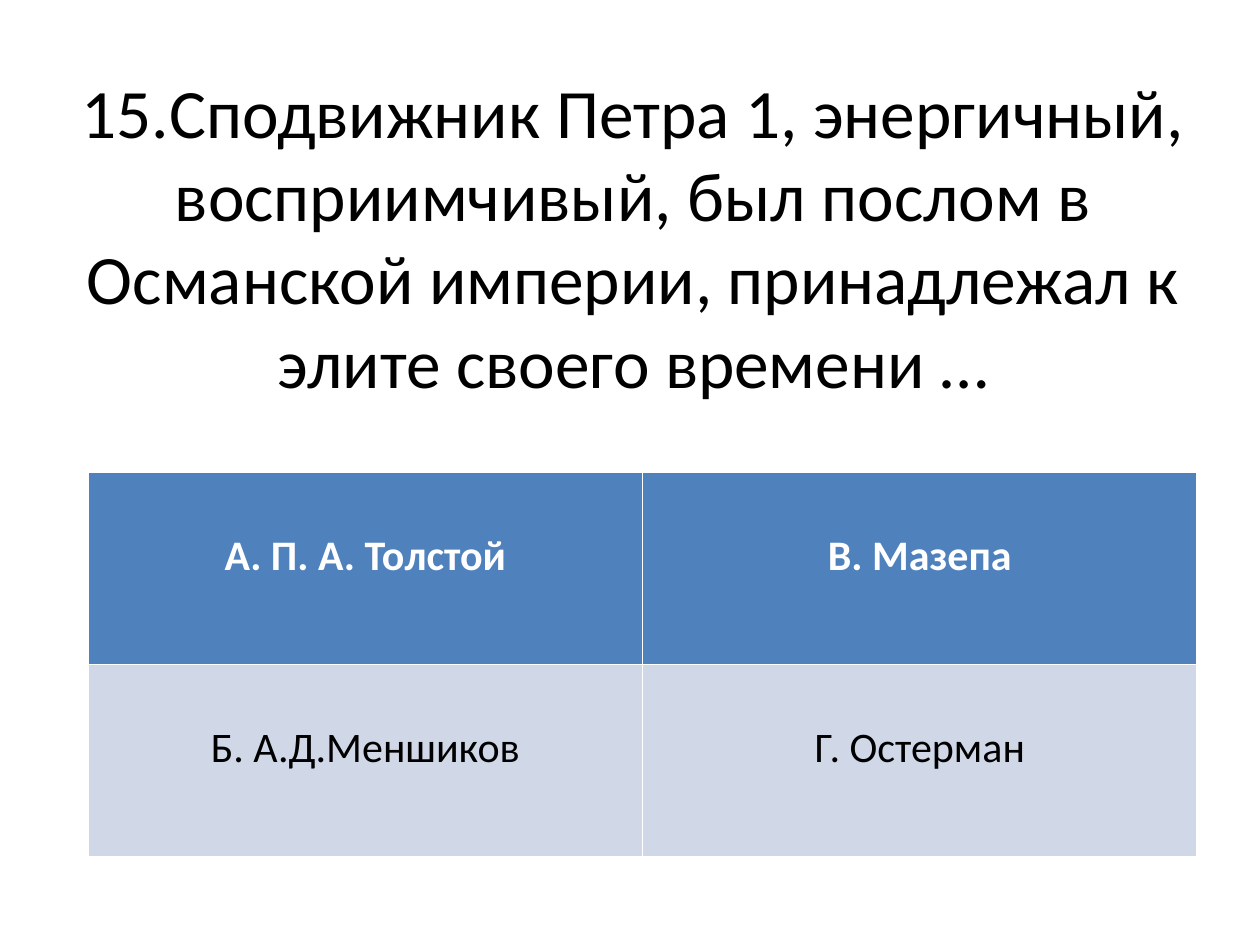
from pptx import Presentation
from pptx.dml.color import RGBColor
from pptx.enum.text import MSO_ANCHOR, PP_ALIGN
from pptx.util import Inches, Pt

QUESTION = ("15.Сподвижник Петра 1, энергичный, восприимчивый, был послом в "
            "Османской империи, принадлежал к элите своего времени …")
ANSWERS = [
    ["А. П. А. Толстой", "В. Мазепа"],
    ["Б. А.Д.Меншиков", "Г. Остерман"],
]
COLORS = {"header": "4F81BD", "body": "D0D8E8", "light": "FFFFFF", "dark": "000000"}
FONT = "Calibri"
TITLE_BOX = (0.55, 0.3, 8.95, 3.14)
TABLE_BOX = (0.7, 3.75, 8.8, 3.05)


def write(tf, text, size, color, bold=False):
    tf.text = text
    p = tf.paragraphs[0]
    p.alignment = PP_ALIGN.CENTER
    font = p.runs[0].font
    font.name, font.size, font.bold = FONT, Pt(size), bold
    font.color.rgb = RGBColor.from_string(COLORS[color])


def add_question(s):
    tf = s.shapes.add_textbox(*map(Inches, TITLE_BOX)).text_frame
    tf.word_wrap = True
    tf.vertical_anchor = MSO_ANCHOR.MIDDLE
    write(tf, QUESTION, 39.6, "dark")


def add_answers(s):
    rows, cols = len(ANSWERS), len(ANSWERS[0])
    table = s.shapes.add_table(rows, cols, *map(Inches, TABLE_BOX)).table
    for i, row in enumerate(ANSWERS):
        header = i == 0
        for j, answer in enumerate(row):
            cell = table.cell(i, j)
            cell.fill.solid()
            cell.fill.fore_color.rgb = RGBColor.from_string(COLORS["header" if header else "body"])
            cell.margin_top = Inches(0.46)
            write(cell.text_frame, answer, 24, "light" if header else "dark", header)


def main():
    prs = Presentation()
    prs.slide_width, prs.slide_height = Inches(10), Inches(7.5)
    s = prs.slides.add_slide(prs.slide_layouts[6])
    add_question(s)
    add_answers(s)
    prs.save("out.pptx")


if __name__ == "__main__":
    main()
